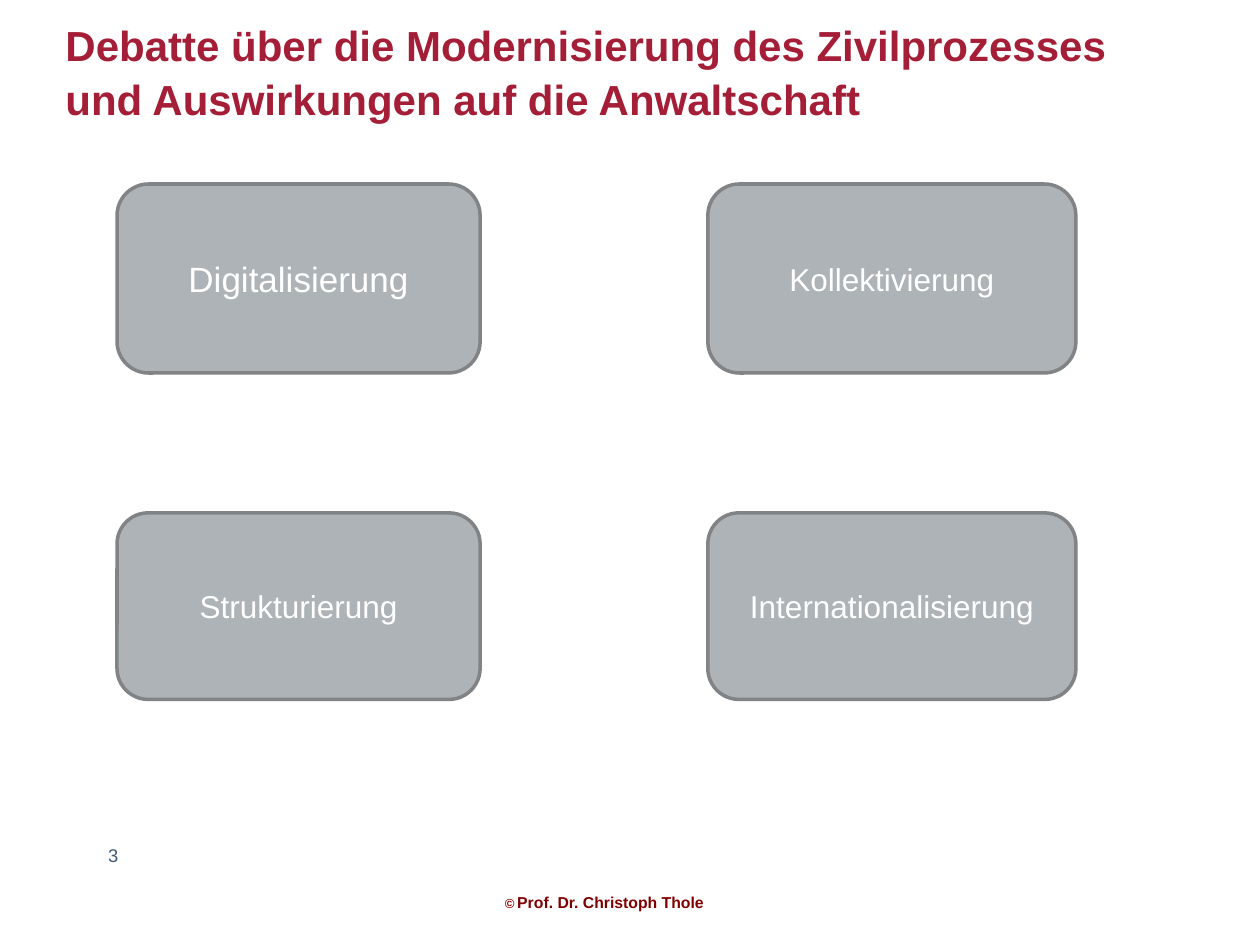
from pptx import Presentation
from pptx.dml.color import RGBColor
from pptx.enum.shapes import MSO_SHAPE
from pptx.enum.text import MSO_ANCHOR, PP_ALIGN
from pptx.util import Cm, Pt

CRIMSON = RGBColor(0xA5, 0x1E, 0x37)
GREY = RGBColor(0xAD, 0xB3, 0xB7)
DARK_GREY = RGBColor(0x80, 0x84, 0x87)
WHITE = RGBColor(0xFF, 0xFF, 0xFF)
BLUE = RGBColor(0x3E, 0x59, 0x78)
MAROON = RGBColor(0x80, 0x00, 0x00)

COLUMNS = [(2.36, 7.32), (14.27, 7.42)]
ROWS = [(3.71, 3.81), (10.34, 3.76)]
TOPICS = [
    [("Digitalisierung", 20), ("Kollektivierung", 18)],
    [("Strukturierung", 18), ("Internationalisierung", 18)],
]


def format_font(font, size, color, bold=False):
    """Set typeface, size, colour and weight of a font."""
    font.name = "Arial"
    font.size = Pt(size)
    font.bold = bold
    font.color.rgb = color


def add_title(slide, text):
    """Place and format the slide title."""
    title = slide.shapes.title
    title.left, title.top, title.width, title.height = Cm(1.32), Cm(0.43), Cm(21.03), Cm(2.06)
    text_frame = title.text_frame
    text_frame.text = text
    text_frame.word_wrap = True
    text_frame.vertical_anchor = MSO_ANCHOR.BOTTOM
    text_frame.margin_left = text_frame.margin_right = 0
    text_frame.margin_top = text_frame.margin_bottom = 0
    paragraph = text_frame.paragraphs[0]
    paragraph.alignment = PP_ALIGN.LEFT
    paragraph.line_spacing = 1.06
    format_font(paragraph.runs[0].font, 24, CRIMSON, bold=True)


def add_topic(slide, text, size, column, row):
    """Add a rounded box with a centred topic."""
    (left, width), (top, height) = column, row
    shape = slide.shapes.add_shape(
        MSO_SHAPE.ROUNDED_RECTANGLE, Cm(left), Cm(top), Cm(width), Cm(height)
    )
    shape.shadow.inherit = False
    shape.fill.solid()
    shape.fill.fore_color.rgb = GREY
    shape.line.color.rgb = DARK_GREY
    shape.line.width = Pt(2)
    text_frame = shape.text_frame
    text_frame.text = text
    text_frame.vertical_anchor = MSO_ANCHOR.MIDDLE
    paragraph = text_frame.paragraphs[0]
    paragraph.alignment = PP_ALIGN.CENTER
    format_font(paragraph.runs[0].font, size, WHITE)


def add_label(slide, left, top, width, height, parts, color, bold=False):
    """Add a one-line text box from (text, size) parts."""
    box = slide.shapes.add_textbox(Cm(left), Cm(top), Cm(width), Cm(height))
    box.text_frame.word_wrap = False
    paragraph = box.text_frame.paragraphs[0]
    for text, size in parts:
        run = paragraph.add_run()
        run.text = text
        format_font(run.font, size, color, bold)


def main():
    """Build and save the slide."""
    presentation = Presentation()
    presentation.slide_width, presentation.slide_height = Cm(25.4), Cm(19.05)
    slide = presentation.slides.add_slide(presentation.slide_layouts[5])
    add_title(
        slide,
        "Debatte über die Modernisierung des Zivilprozesses "
        "und Auswirkungen auf die Anwaltschaft",
    )
    for row, topics in zip(ROWS, TOPICS):
        for column, (text, size) in zip(COLUMNS, topics):
            add_topic(slide, text, size, column, row)
    add_label(slide, 1.93, 16.89, 1.27, 0.71, [("3", 10.5)], BLUE)
    credit = [("©", 7.5), (" ", 5.2), ("Prof. Dr. Christoph Thole", 9)]
    add_label(slide, 9.93, 17.88, 4.67, 0.64, credit, MAROON, bold=True)
    presentation.save("out.pptx")


if __name__ == "__main__":
    main()
